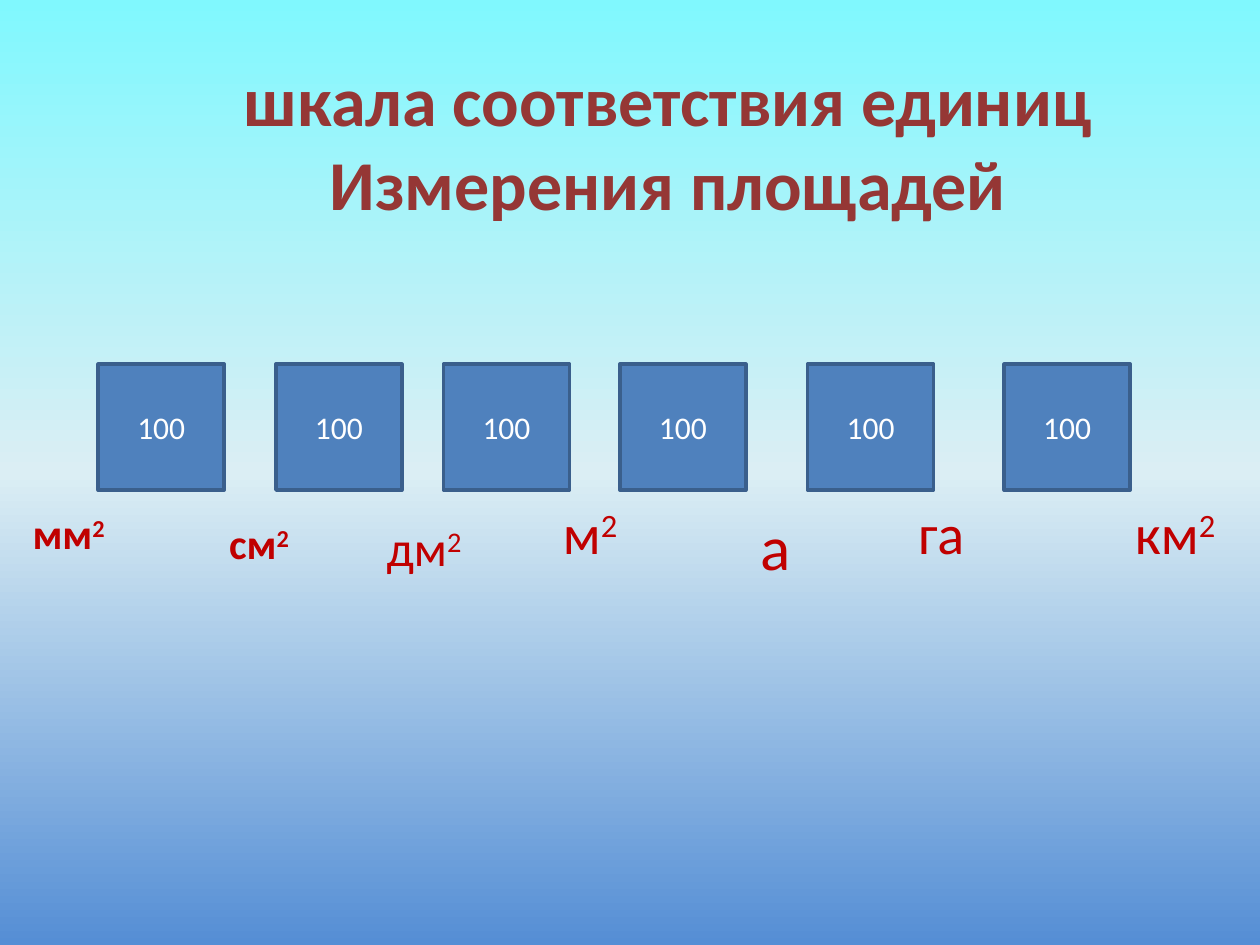
from copy import deepcopy
from lxml import etree
from pptx import Presentation, util as u
from pptx.dml.color import RGBColor
from pptx.enum import shapes, text
from pptx.oxml import ns

HEAD = ["шкала соответствия единиц", "Измерения площадей"]
FACTOR = "100"
LEFTS = [0.78, 2.19, 3.52, 4.92, 6.41, 7.97]
UNITS = [
    ("мм", "2", 24, True, (0.16, 3.98, 1.02, 0.5)),
    ("см", "2", 24, True, (1.72, 4.06, 0.7, 0.5)),
    ("дм", "2", 28, False, (2.97, 4.06, 0.83, 0.57)),
    ("м", "2", 32, False, (4.37, 3.91, 0.83, 0.64)),
    ("а", "", 36, False, (5.94, 3.98, 0.37, 0.71)),
    ("га", "", 32, False, (7.19, 3.91, 1.33, 0.64)),
    ("км", "2", 32, False, (8.91, 3.91, 0.94, 0.64)),
]
THEME = {
    "font": "Calibri", "head": "953735", "halo": "FEFEFE", "unit": "C00000",
    "box": "4F81BD", "edge": "3A5F8C", "label": "FFFFFF",
    "sky": [(0, "80F8FE"), (0.5, "DBEEF4"), (1, "558ED5")],
    "head_size": 40, "label_size": 18,
}


def rgb(name):
    return RGBColor.from_string(THEME[name])


def add_run(para, words, size, color, bold=False):
    run = para.add_run()
    run.text = words
    font = run.font
    font.name, font.size, font.bold = THEME["font"], u.Pt(size), bold
    font.color.rgb = rgb(color)
    return run


def add_halo(run):
    line = etree.Element(ns.qn("a:ln"), w=str(u.Pt(1.5)))
    fill = etree.SubElement(line, ns.qn("a:solidFill"))
    etree.SubElement(fill, ns.qn("a:srgbClr"), val=THEME["halo"])
    run._r.get_or_add_rPr().insert(0, line)


def paint_sky(slide):
    fill = slide.background.fill
    fill.gradient()
    fill.gradient_angle = 270
    stops = slide.element.find(".//" + ns.qn("a:gsLst"))
    stops.append(deepcopy(stops[-1]))
    for stop, (pos, color) in zip(fill.gradient_stops, THEME["sky"]):
        stop.position = pos
        stop.color.rgb = RGBColor.from_string(color)


def add_head(slide):
    title = slide.shapes.title
    title.left, title.top = u.Inches(1.8), u.Inches(0.39)
    title.width, title.height = u.Inches(7), u.Inches(1.45)
    frame = title.text_frame
    frame.word_wrap = False
    frame.auto_size = text.MSO_AUTO_SIZE.SHAPE_TO_FIT_TEXT
    for i, words in enumerate(HEAD):
        para = frame.add_paragraph() if i else frame.paragraphs[0]
        para.alignment = text.PP_ALIGN.CENTER
        add_halo(add_run(para, words, THEME["head_size"], "head", True))


def add_box(slide, left):
    box = slide.shapes.add_shape(
        shapes.MSO_SHAPE.RECTANGLE,
        u.Inches(left), u.Inches(2.89), u.Inches(1), u.Inches(1))
    box.shadow.inherit = False
    box.fill.solid()
    box.fill.fore_color.rgb = rgb("box")
    box.line.color.rgb = rgb("edge")
    box.line.width = u.Pt(2)
    frame = box.text_frame
    frame.vertical_anchor = text.MSO_ANCHOR.MIDDLE
    para = frame.paragraphs[0]
    para.alignment = text.PP_ALIGN.CENTER
    add_run(para, FACTOR, THEME["label_size"], "label")


def add_unit(slide, name, power, size, bold, place):
    frame = slide.shapes.add_textbox(*map(u.Inches, place)).text_frame
    frame.word_wrap = True
    frame.auto_size = text.MSO_AUTO_SIZE.SHAPE_TO_FIT_TEXT
    para = frame.paragraphs[0]
    add_run(para, name, size, "unit", bold)
    if power:
        run = add_run(para, power, size, "unit", bold)
        run._r.get_or_add_rPr().set("baseline", "30000")


def main():
    deck = Presentation()
    deck.slide_width, deck.slide_height = u.Inches(10), u.Inches(7.5)
    slide = deck.slides.add_slide(deck.slide_layouts[5])
    paint_sky(slide)
    add_head(slide)
    for left in LEFTS:
        add_box(slide, left)
    for unit in UNITS:
        add_unit(slide, *unit)
    deck.save("out.pptx")


if __name__ == "__main__":
    main()
